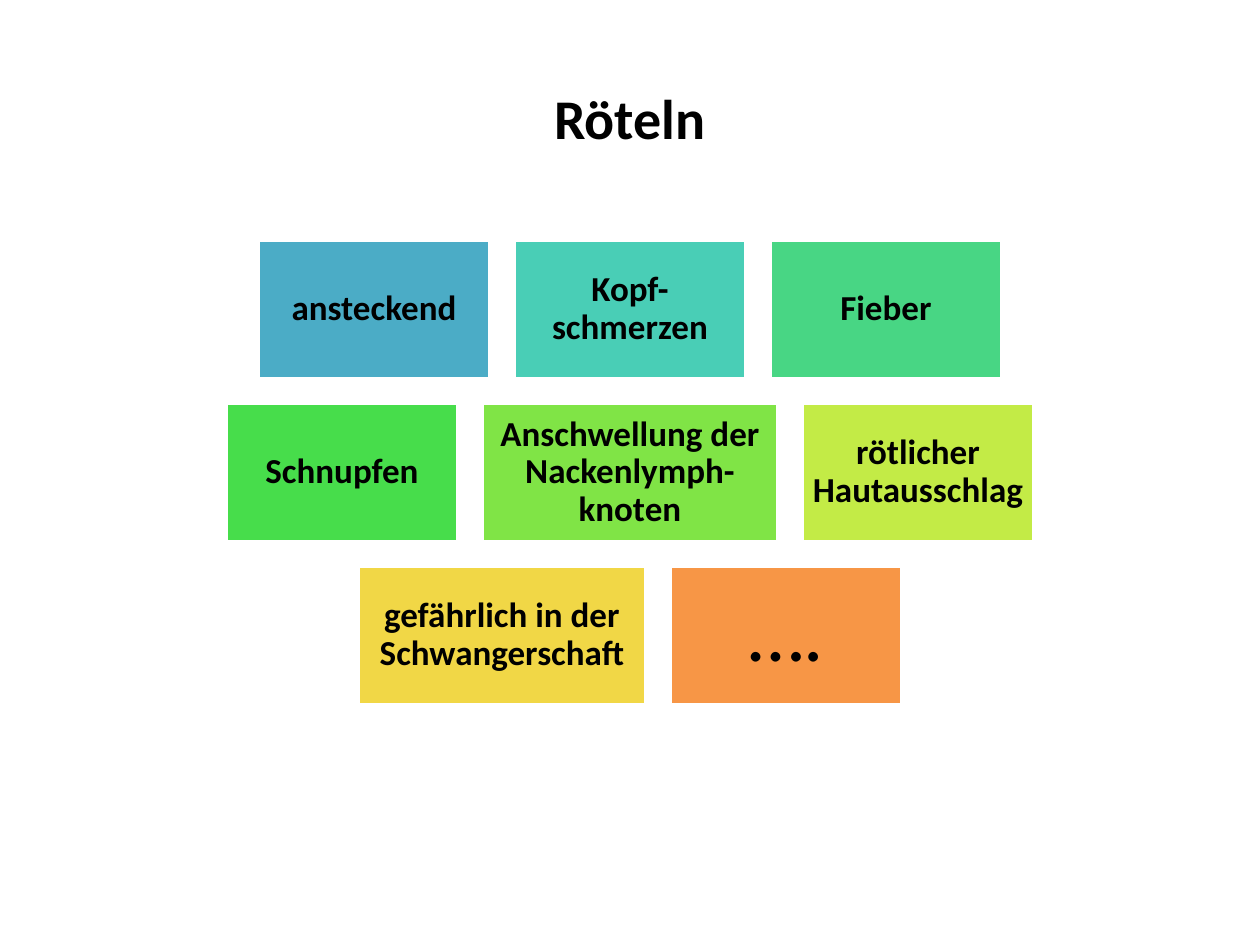
from pptx import Presentation
from pptx.dml.color import RGBColor
from pptx.enum.shapes import MSO_SHAPE as Shape
from pptx.enum.text import MSO_ANCHOR as Anchor, PP_ALIGN as Align
from pptx.util import Emu, Pt

SCALE = 914400 // 126  # EMU per px
WIDE, HIGH = 1260, 945
TOP, BOX, GAP = 240, 139, 24

# Each row: (text, width, fill)
ROWS = [
    [("ansteckend", 232, "4BACC6"),
     ("Kopf-schmerzen", 232, "49CEB6"),
     ("Fieber", 232, "48D684")],
    [("Schnupfen", 232, "47DD4B"),
     ("Anschwellung der Nackenlymph-knoten", 296, "80E446"),
     ("rötlicher Hautausschlag", 232, "C3EB46")],
    [("gefährlich in der Schwangerschaft", 288, "F1D746"),
     ("….", 232, "F79646")],
]


def px(n):
    return Emu(n * SCALE)


def color(code):
    return RGBColor.from_string(code)


class Deck:
    face = "Calibri"
    ink = "000000"
    edge = "FFFFFF"

    def __init__(self):
        self.prs = Presentation()
        self.prs.slide_width, self.prs.slide_height = px(WIDE), px(HIGH)
        self.slide = self.prs.slides.add_slide(self.prs.slide_layouts[6])

    def label(self, frame, text, size, bold=True, inset=9, space=1.0):
        frame.word_wrap = True
        frame.vertical_anchor = Anchor.MIDDLE
        frame.margin_left = frame.margin_right = px(inset)
        frame.margin_top = frame.margin_bottom = px(inset)
        para = frame.paragraphs[0]
        para.text = text
        para.alignment = Align.CENTER
        para.line_spacing = space
        font = para.font
        font.name, font.size, font.bold = self.face, Pt(size), bold
        font.color.rgb = color(self.ink)

    def title(self, text, x, y, w, h):
        box = self.slide.shapes.add_textbox(px(x), px(y), px(w), px(h))
        self.label(box.text_frame, text, 32)

    def tile(self, text, x, y, w, h, fill, **style):
        box = self.slide.shapes.add_shape(
            Shape.RECTANGLE, px(x), px(y), px(w), px(h))
        box.shadow.inherit = False
        box.fill.solid()
        box.fill.fore_color.rgb = color(fill)
        box.line.color.rgb = color(self.edge)
        box.line.width = Pt(2)
        self.label(box.text_frame, text, space=0.9, **style)


def main():
    deck = Deck()
    deck.title("Röteln", 63, 38, 1134, 158)

    # Rows of tiles, each centred on the slide
    for i, row in enumerate(ROWS):
        span = sum(w for _, w, _ in row) + GAP * (len(row) - 1)
        x, y = (WIDE - span) // 2, TOP + i * (BOX + GAP)
        for text, w, fill in row:
            # The open-ended tile has large, light dots
            if text == "….":
                style = dict(size=46, bold=False, inset=24)
            else:
                style = dict(size=20)
            deck.tile(text, x, y, w, BOX, fill, **style)
            x += w + GAP

    deck.prs.save("out.pptx")


if __name__ == "__main__":
    main()
